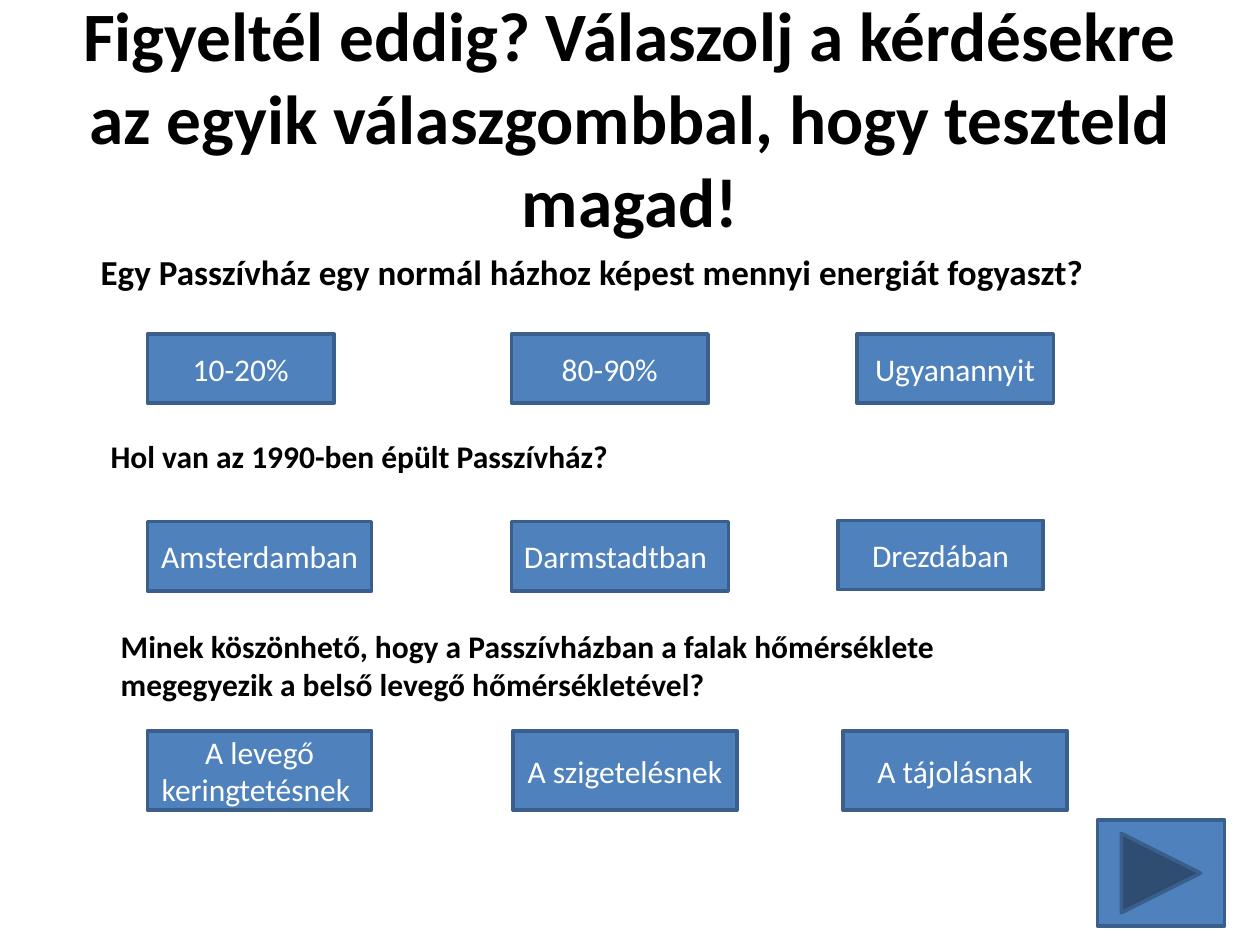
from dataclasses import dataclass

from pptx import Presentation
from pptx.dml.color import RGBColor
from pptx.enum.shapes import MSO_SHAPE
from pptx.enum.text import MSO_ANCHOR, MSO_AUTO_SIZE, PP_ALIGN
from pptx.util import Emu, Inches, Pt

BLACK = RGBColor(0x00, 0x00, 0x00)
WHITE = RGBColor(0xFF, 0xFF, 0xFF)
BLUE = RGBColor(0x4F, 0x81, 0xBD)
DARK_BLUE = RGBColor(0x3A, 0x5F, 0x8C)
FONT = "Calibri"

LEFT, CENTER, JUSTIFY = PP_ALIGN.LEFT, PP_ALIGN.CENTER, PP_ALIGN.JUSTIFY
TOP, MIDDLE = MSO_ANCHOR.TOP, MSO_ANCHOR.MIDDLE
BUTTON = MSO_SHAPE.ACTION_BUTTON_CUSTOM
NEXT_BUTTON = MSO_SHAPE.ACTION_BUTTON_FORWARD_OR_NEXT
NO_AUTOFIT = MSO_AUTO_SIZE.NONE

# Slide grid: square cells, positions in columns and rows
COLUMNS, ROWS = 100, 75
TITLE_LAYOUT = 5


@dataclass(frozen=True)
class Box:
    col: float
    row: float
    cols: float
    rows: float


@dataclass(frozen=True)
class Answer:
    text: str
    box: Box
    align: PP_ALIGN = CENTER


@dataclass(frozen=True)
class Question:
    text: str
    box: Box
    size: float
    answers: tuple[Answer, ...]


QUESTIONS = (
    Question(
        "Egy Passzívház egy normál házhoz képest mennyi energiát fogyaszt?",
        Box(7, 19.4, 85.2, 4.4), 20,
        (Answer("10-20%", Box(11.7, 26.5, 14.8, 5.5)),
         Answer("80-90%", Box(40.6, 26.5, 15.6, 5.5)),
         Answer("Ugyanannyit", Box(68, 26.5, 15.6, 5.5)))),
    Question(
        "Hol van az 1990-ben épült Passzívház?",
        Box(7.8, 34.2, 82.7, 4), 18,
        (Answer("Amsterdamban", Box(11.7, 41.4, 17.8, 5.5)),
         Answer("Darmstadtban", Box(40.6, 41.4, 17.2, 5.5), JUSTIFY),
         Answer("Drezdában", Box(66.5, 41.3, 16.3, 5.5)))),
    Question(
        "Minek köszönhető, hogy a Passzívházban a falak hőmérséklete "
        "megegyezik a belső levegő hőmérsékletével?",
        Box(8.6, 49.3, 78.5, 7.1), 18,
        (Answer("A levegő keringtetésnek ", Box(11.7, 58, 17.8, 6.3)),
         Answer("A szigetelésnek", Box(40.7, 58, 17.8, 6.3)),
         Answer("A tájolásnak", Box(66.9, 58, 17.8, 6.3)))),
)

prs = Presentation()
prs.slide_width, prs.slide_height = Inches(10), Inches(7.5)


def place(box: Box) -> tuple[Emu, Emu, Emu, Emu]:
    cell_w, cell_h = prs.slide_width / COLUMNS, prs.slide_height / ROWS
    return (Emu(round(box.col * cell_w)), Emu(round(box.row * cell_h)),
            Emu(round(box.cols * cell_w)), Emu(round(box.rows * cell_h)))


def write(sp, text: str, *, size: float = 18, color: RGBColor = BLACK,
          bold: bool = False, align: PP_ALIGN = LEFT,
          anchor: MSO_ANCHOR = TOP) -> None:
    tf = sp.text_frame
    tf.word_wrap = True
    tf.auto_size = NO_AUTOFIT
    tf.vertical_anchor = anchor
    p = tf.paragraphs[0]
    p.alignment = align
    r = p.add_run()
    r.text = text
    r.font.name, r.font.size, r.font.bold = FONT, Pt(size), bold
    r.font.color.rgb = color


def add_button(s, kind: MSO_SHAPE, box: Box):
    sp = s.shapes.add_shape(kind, *place(box))
    sp.shadow.inherit = False
    sp.fill.solid()
    sp.fill.fore_color.rgb = BLUE
    sp.line.color.rgb = DARK_BLUE
    sp.line.width = Pt(2)
    return sp


def add_question(s, question: Question) -> None:
    sp = s.shapes.add_textbox(*place(question.box))
    write(sp, question.text, size=question.size, bold=True)
    for answer in question.answers:
        sp = add_button(s, BUTTON, answer.box)
        write(sp, answer.text, color=WHITE, align=answer.align, anchor=MIDDLE)


def main() -> None:
    s = prs.slides.add_slide(prs.slide_layouts[TITLE_LAYOUT])

    # Title
    title = s.shapes.title
    title.left, title.top, title.width, title.height = place(Box(5, 3, 90, 12.5))
    write(title, "Figyeltél eddig? Válaszolj a kérdésekre az egyik "
          "válaszgombbal, hogy teszteld magad!",
          size=39.6, bold=True, align=CENTER, anchor=MIDDLE)

    # Questions with their answer buttons
    for question in QUESTIONS:
        add_question(s, question)

    # Button to the next slide
    add_button(s, NEXT_BUTTON, Box(87.1, 65.1, 10.1, 8.4))

    prs.save("out.pptx")


if __name__ == "__main__":
    main()
